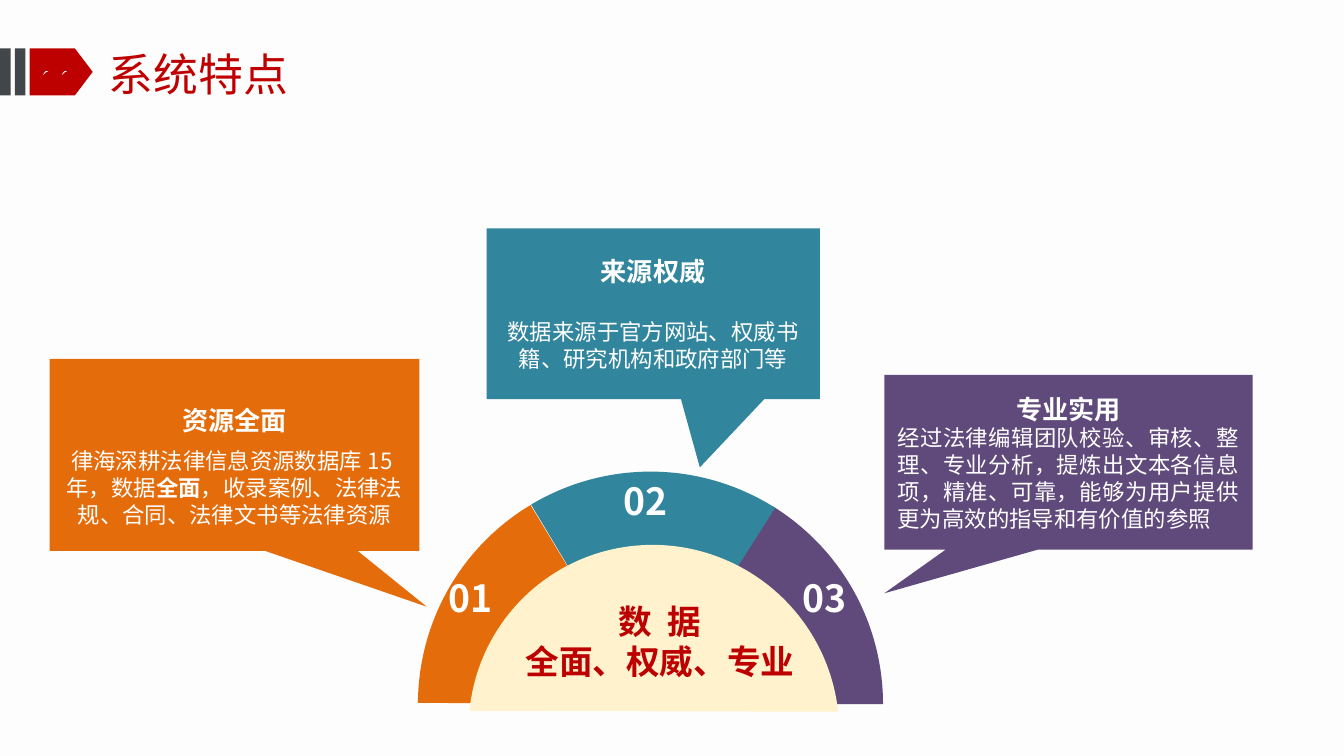
from lxml import etree
from pptx import Presentation, util as u
from pptx.dml.color import RGBColor
from pptx.enum import shapes, text
from pptx.oxml.ns import qn

W = 10
H = W * 9 / 16
FONT = "Noto Sans CJK SC"
RED, GREY, WHITE, CREAM = "BD0000", "40464A", "FFFFFF", "FFF2CC"
ORANGE, TEAL, PURPLE = "E46C0A", "31859C", "604A7B"
M, A, ANC = shapes.MSO_SHAPE, text.PP_ALIGN, text.MSO_ANCHOR

TITLE = "系统特点"
CORE = ["数  据", "全面、权威、专业"]
ARC_CENTRE, ARC_SIZE = (4.84, 5.24), 3.46
ARCS = [
    (PURPLE, 90, (126.98, 162)),
    (TEAL, 45, (116.47, 154.44)),
    (ORANGE, 341.8, (119.12, 154.29)),
]
NUMBERS = [("01", 3.24, 4.23), ("02", 4.54, 3.51), ("03", 5.87, 4.23)]
CALLOUTS = [
    dict(box=(0.37, 2.67, 2.75, 1.43), tip=(0.52, 0.79), fill=ORANGE, top=0.22,
         gap=6, align=A.CENTER, head="资源全面",
         body=[("律海深耕法律信息资源数据库15年，数据", False), ("全面", True),
               ("，收录案例、法律法规、合同、法律文书等法律资源", False)]),
    dict(box=(3.62, 1.7, 2.48, 1.27), tip=(0.14, 0.9), fill=TEAL, top=0.05,
         gap=16.8, align=A.CENTER, head="来源权威",
         body=[("数据来源于官方网站、权威书籍、研究机构和政府部门等", False)]),
    dict(box=(6.58, 2.79, 2.74, 1.3), tip=(-0.5, 0.75), fill=PURPLE, top=0.05,
         gap=0, align=A.JUSTIFY, head="专业实用",
         body=[("经过法律编辑团队校验、审核、整理、专业分析，提炼出文本各信息项，"
                "精准、可靠，能够为用户提供更为高效的指导和有价值的参照", False)]),
]
MARK = [(0.5, 0.53), (0.48, 0.54), (0.46, 0.56), (0.47, 0.54), (0.48, 0.53)]


def rgb(value):
    return RGBColor.from_string(value)


def paint(sp, color):
    sp.shadow.inherit = False
    sp.fill.solid()
    sp.fill.fore_color.rgb = rgb(color)
    sp.line.fill.background()
    return sp


def add_shape(kind, box, color, adj=(), rot=0):
    sp = paint(s.shapes.add_shape(kind, *map(u.Inches, box)), color)
    for i, value in enumerate(adj):
        sp.adjustments[i] = value
    sp.rotation = rot
    return sp


def style(p, size, color, bold=False, align=A.LEFT):
    p.alignment = align
    p.line_spacing = u.Pt(size * 1.2)
    f = p.font
    f.size, f.bold, f.name = u.Pt(size), bold, FONT
    f.color.rgb = rgb(color)
    latin = p._p.pPr.find(qn("a:defRPr")).find(qn("a:latin"))
    ea = etree.Element(qn("a:ea"), typeface=FONT)
    latin.addnext(ea)


def add_text(box, lines, size, color, bold=True, align=A.LEFT, wrap=True):
    tf = s.shapes.add_textbox(*map(u.Inches, box)).text_frame
    tf.word_wrap = wrap
    tf.text = "\n".join(lines)
    for p in tf.paragraphs:
        style(p, size, color, bold, align)
    return tf


def add_callout(box, tip, fill, top, gap, align, head, body):
    tf = add_shape(M.RECTANGULAR_CALLOUT, box, fill, tip).text_frame
    tf.word_wrap, tf.vertical_anchor = True, ANC.MIDDLE
    tf.margin_top = u.Inches(top)
    p = tf.paragraphs[0]
    p.text = head
    style(p, 14, WHITE, True, A.CENTER)
    p = tf.add_paragraph()
    style(p, 12, WHITE, False, align)
    p.space_before = u.Pt(gap)
    for words, bold in body:
        r = p.add_run()
        r.text = words
        if bold:
            r.font.bold = True


prs = Presentation()
prs.slide_width, prs.slide_height = u.Inches(W), u.Inches(H)
s = prs.slides.add_slide(prs.slide_layouts[6])

add_shape(M.RECTANGLE, (0, 0, W, H), "FDFDFD")
add_shape(M.PENTAGON, (0.22, 0.36, 0.47, 0.35), RED, [0.38])
for x in (0.11, 0):
    add_shape(M.RECTANGLE, (x, 0.36, 0.08, 0.35), GREY)
tf = add_text((0.81, 0.31, 4.9, 0.47), [TITLE], 24, "C00000", bold=False)
tf.vertical_anchor = ANC.MIDDLE
tf.margin_left = tf.margin_right = tf.margin_top = tf.margin_bottom = 0

x, y = (c - ARC_SIZE / 2 for c in ARC_CENTRE)
for color, rot, adj in ARCS:
    add_shape(M.PIE, (x, y, ARC_SIZE, ARC_SIZE), color, adj, rot)
add_shape(M.CHORD, (3.49, 4.05, 2.75, 2.77), CREAM, (27.53, 128.39), 140.2)
add_text((3.79, 4.42, 2.24, 0.71), CORE, 18, RED, align=A.CENTER)
for label, x, y in NUMBERS:
    add_text((x, y, 0.57, 0.44), [label], 20, WHITE, wrap=False)
for callout in CALLOUTS:
    add_callout(**callout)

for dx in (0, -0.14):
    start, *rest = [(u.Inches(x + dx), u.Inches(y)) for x, y in MARK]
    fb = s.shapes.build_freeform(*start)
    fb.add_line_segments(rest, close=True)
    paint(fb.convert_to_shape(), WHITE)

prs.save("out.pptx")
